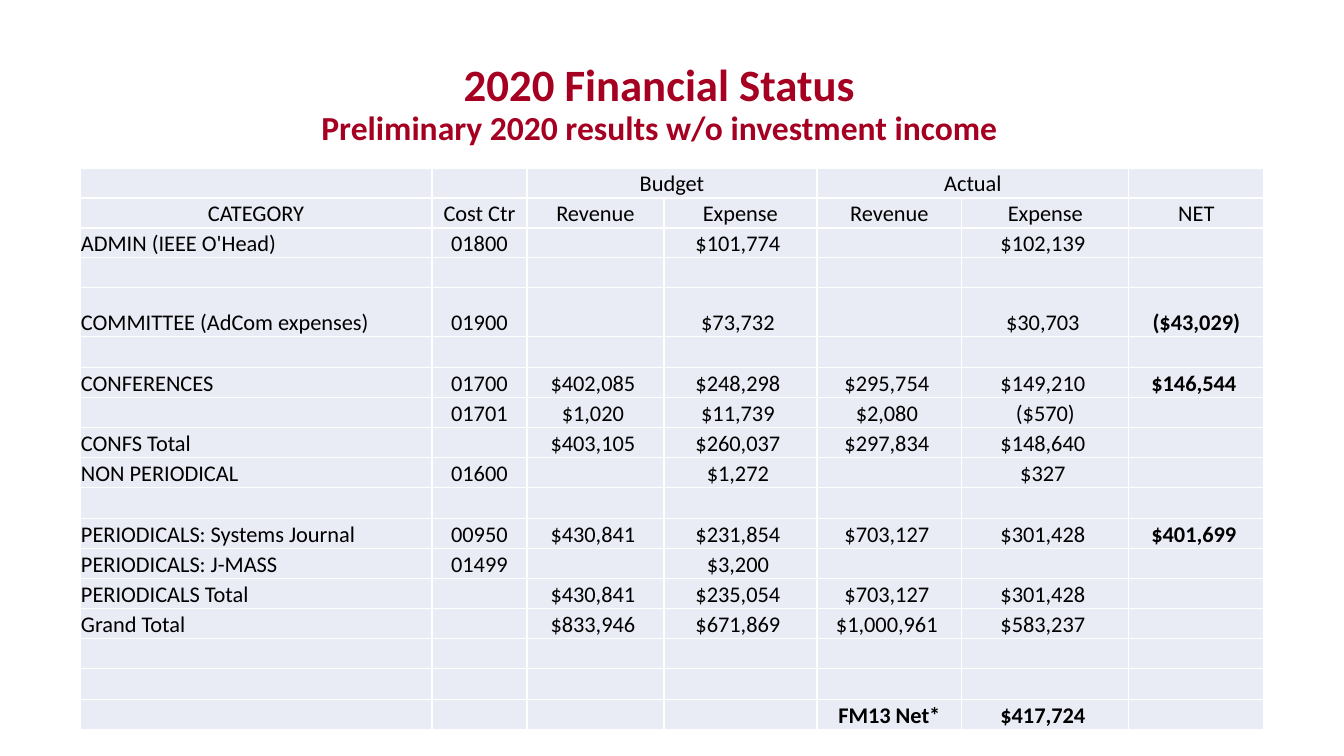
from lxml.etree import SubElement
from pptx import Presentation
from pptx.dml.color import RGBColor
from pptx.enum.text import MSO_ANCHOR, MSO_AUTO_SIZE, PP_ALIGN
from pptx.oxml.ns import qn
from pptx.util import Emu, Pt

PX = 914400 / 100.8
FONT = "Calibri"
CRIMSON, BLACK, WHITE, PALE_BLUE = "A50021", "000000", "FFFFFF", "E9EBF5"


def px(count):
    return Emu(round(count * PX))


def write(paragraph, text, size=16, color=BLACK, bold=False, align=PP_ALIGN.CENTER):
    paragraph.alignment = align
    run = paragraph.add_run()
    run.text = text
    run.font.name = FONT
    run.font.size = Pt(size)
    run.font.bold = bold
    run.font.color.rgb = RGBColor.from_string(color)


presentation = Presentation()
presentation.slide_width, presentation.slide_height = px(1344), px(756)
slide = presentation.slides.add_slide(presentation.slide_layouts[5])

# Title with its subtitle line
title = slide.shapes.title
title.left, title.top, title.width, title.height = px(210), px(58), px(899), px(126)
title.text_frame.auto_size = MSO_AUTO_SIZE.NONE
title.text_frame.vertical_anchor = MSO_ANCHOR.TOP
heading = title.text_frame.paragraphs[0]
heading.line_spacing = 0.9
write(heading, "2020 Financial Status", size=32, color=CRIMSON, bold=True)
heading.add_line_break()
write(heading, "Preliminary 2020 results w/o investment income",
      size=24, color=CRIMSON, bold=True)

# Budget and actual figures: category, cost centre, two pairs, net
BLANK = [""] * 7
finances = [
    ["", "", "Budget", "", "Actual", "", ""],
    ["CATEGORY", "Cost Ctr", "Revenue", "Expense", "Revenue", "Expense", "NET"],
    ["ADMIN (IEEE O'Head)", "01800", "", "$101,774 ", "", "$102,139 ", ""],
    BLANK,
    ["COMMITTEE (AdCom expenses)", "01900", "", "$73,732 ", "", "$30,703 ", "($43,029)"],
    BLANK,
    ["CONFERENCES", "01700", "$402,085 ", "$248,298 ", "$295,754 ", "$149,210 ", "$146,544 "],
    ["", "01701", "$1,020 ", "$11,739 ", "$2,080 ", "($570)", ""],
    ["CONFS Total", "", "$403,105 ", "$260,037 ", "$297,834 ", "$148,640 ", ""],
    ["NON PERIODICAL", "01600", "", "$1,272 ", "", "$327 ", ""],
    BLANK,
    ["PERIODICALS: Systems Journal", "00950", "$430,841 ", "$231,854 ", "$703,127 ",
     "$301,428 ", "$401,699 "],
    ["PERIODICALS: J-MASS", "01499", "", "$3,200 ", "", "", ""],
    ["PERIODICALS Total", "", "$430,841 ", "$235,054 ", "$703,127 ", "$301,428 ", ""],
    ["Grand Total", "", "$833,946 ", "$671,869 ", "$1,000,961 ", "$583,237 ", ""],
    BLANK,
    BLANK,
    ["", "", "", "", "FM13 Net*", "$417,724 ", ""],
]
column_widths = [352, 95, 137, 153, 145, 167, 135]
row_heights = [30] * len(finances)
row_heights[4] = 49
for stretched in (5, 10, 16):
    row_heights[stretched] = 31

# Table grid
budget_table = slide.shapes.add_table(
    len(finances), len(column_widths), px(80), px(168),
    px(sum(column_widths)), px(sum(row_heights))).table
budget_table.first_row = False
budget_table.horz_banding = False
for column, width in zip(budget_table.columns, column_widths):
    column.width = px(width)
for row, height in zip(budget_table.rows, row_heights):
    row.height = px(height)
for first in (2, 4):
    budget_table.cell(0, first).merge(budget_table.cell(0, first + 1))

# Cell format and wording
last_row, net_column = len(finances) - 1, len(column_widths) - 1
for r, entries in enumerate(finances):
    for c, entry in enumerate(entries):
        cell = budget_table.cell(r, c)
        cell.vertical_anchor = MSO_ANCHOR.BOTTOM
        cell.margin_left = cell.margin_top = cell.margin_right = px(1)
        cell.margin_bottom = 0
        properties = cell._tc.get_or_add_tcPr()
        for side in ("a:lnL", "a:lnR", "a:lnT", "a:lnB"):
            border = SubElement(properties, qn(side), w=str(Pt(1)))
            line_fill = SubElement(border, qn("a:solidFill"))
            SubElement(line_fill, qn("a:srgbClr"), val=WHITE)
        cell.fill.solid()
        cell.fill.fore_color.rgb = RGBColor.from_string(PALE_BLUE)
        paragraph = cell.text_frame.paragraphs[0]
        if entry:
            is_category = c == 0 and r > 1
            write(paragraph, entry,
                  bold=r == last_row or (c == net_column and r > 1),
                  align=PP_ALIGN.LEFT if is_category else PP_ALIGN.CENTER)
        else:
            # Keeps empty cells from stretching their row
            SubElement(paragraph._p, qn("a:endParaRPr"), sz="1600")

presentation.save("out.pptx")
